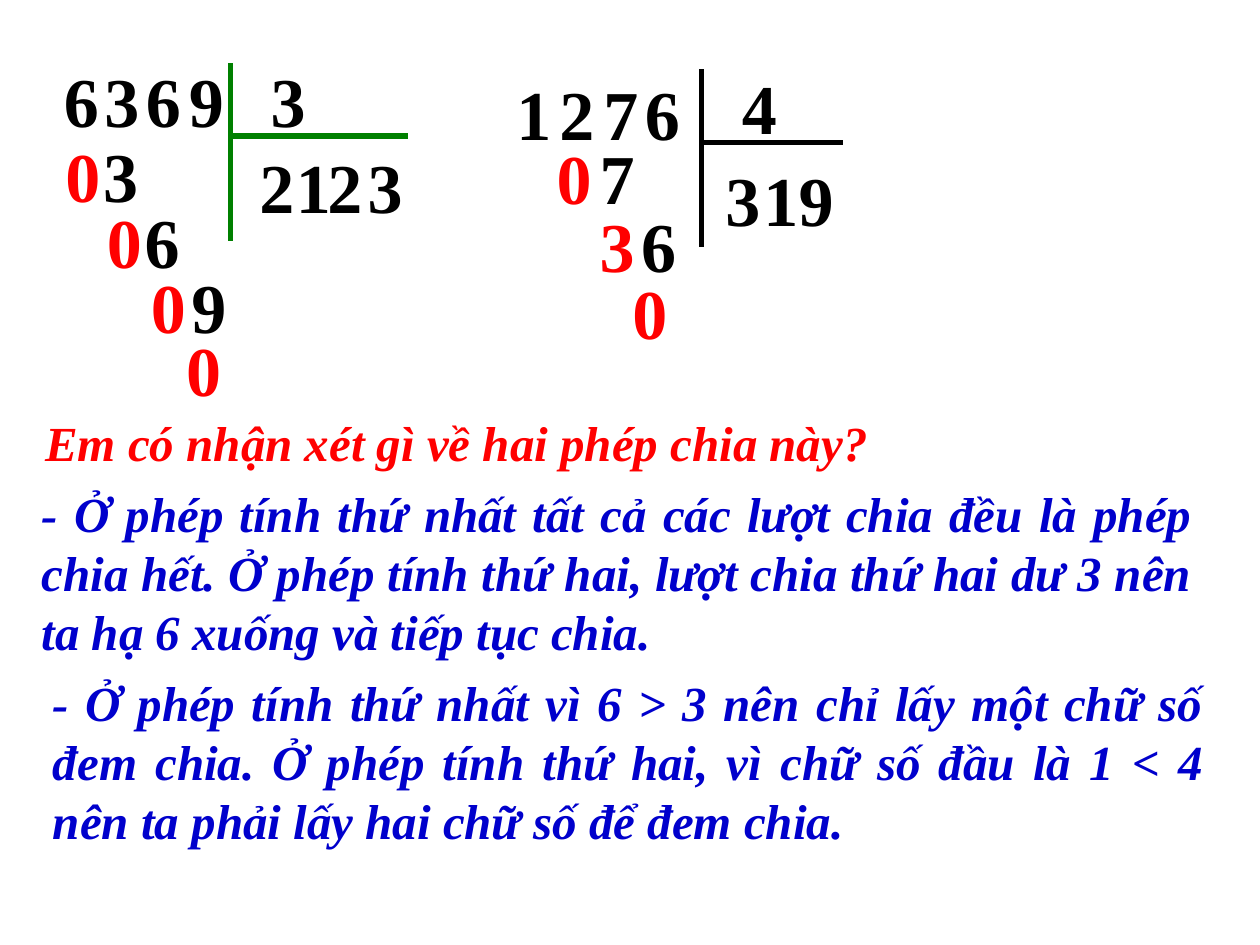
from dataclasses import dataclass

from lxml import etree
from pptx import Presentation
from pptx.dml.color import RGBColor
from pptx.enum.shapes import MSO_CONNECTOR
from pptx.enum.text import MSO_ANCHOR, MSO_AUTO_SIZE, PP_ALIGN
from pptx.oxml.ns import qn
from pptx.util import Inches, Pt

STRAIGHT = MSO_CONNECTOR.STRAIGHT
JUSTIFY = PP_ALIGN.JUSTIFY
LEFT = PP_ALIGN.LEFT
TOP = MSO_ANCHOR.TOP
GROW = MSO_AUTO_SIZE.SHAPE_TO_FIT_TEXT
TWO_CONTENT = 3


@dataclass(frozen=True)
class Theme:
    font: str = "Times New Roman"
    digit_size: int = 40
    text_size: int = 28
    rule_width: int = 3
    edge_width: int = 2
    space_before: int = 50000  # half a line, in thousandths of a percent
    ink: RGBColor = RGBColor(0, 0, 0)
    paper: RGBColor = RGBColor(255, 255, 255)
    red: RGBColor = RGBColor(255, 0, 0)
    green: RGBColor = RGBColor(0, 128, 0)
    blue: RGBColor = RGBColor(0, 0, 204)


class Board:
    """Draws on one slide, measured on a grid of 100 columns by 75 rows."""

    def __init__(self, deck, theme):
        self.theme = theme
        self.slide = deck.slides.add_slide(deck.slide_layouts[TWO_CONTENT])
        self.column = deck.slide_width / 100
        self.row = deck.slide_height / 75

    def place(self, columns, rows):
        return round(columns * self.column), round(rows * self.row)

    def set_text(self, box, text, size, color, align, italic=False):
        frame = box.text_frame
        frame.text = text
        frame.word_wrap = True
        frame.auto_size = GROW
        frame.vertical_anchor = TOP
        para = frame.paragraphs[0]
        para.alignment = align
        para.space_before = Pt(0)
        properties = para._p.get_or_add_pPr()
        before = properties.find(qn("a:spcBef"))
        before.clear()
        etree.SubElement(before, qn("a:spcPct"), val=str(self.theme.space_before))
        font = para.runs[0].font
        font.name, font.size = self.theme.font, Pt(size)
        font.bold, font.italic = True, italic
        font.color.rgb = color
        return properties

    def digits(self, top, cells, remainder=False):
        """One row of digits; a remainder row starts with a red digit."""
        for index, (digit, left, width) in enumerate(cells):
            box = self.slide.shapes.add_textbox(*self.place(left, top), *self.place(width, 7.7))
            color = self.theme.red if remainder and index == 0 else self.theme.ink
            self.set_text(box, digit, self.theme.digit_size, color, LEFT)

    def division_bars(self, left, top, middle, right, color):
        bottom = top + 14.1
        group = self.slide.shapes.add_group_shape()
        for start, end in (
            ((left, top), (left, bottom)),
            ((left, middle), (right, middle)),
        ):
            bar = group.shapes.add_connector(STRAIGHT, *self.place(*start), *self.place(*end))
            bar.line.color.rgb = color
            bar.line.width = Pt(self.theme.rule_width)
            etree.SubElement(bar._element.spPr, qn("a:effectLst"))

    def statement(self, index, text, left, top, height, color):
        box = self.slide.placeholders[index]
        box.left, box.top = self.place(left, top)
        box.width, box.height = self.place(93.3, height)
        box.fill.solid()
        box.fill.fore_color.rgb = self.theme.paper
        box.line.color.rgb = self.theme.paper
        box.line.width = Pt(self.theme.edge_width)
        properties = self.set_text(box, text, self.theme.text_size, color, JUSTIFY, True)
        properties.set("marL", "0")
        properties.set("indent", "0")
        etree.SubElement(properties, qn("a:buNone"))


def main():
    deck = Presentation()
    deck.slide_width, deck.slide_height = Inches(10), Inches(7.5)
    theme = Theme()
    board = Board(deck, theme)

    # First division: 6369 : 3
    board.division_bars(18.3, 5, 10.8, 32.4, theme.green)
    board.digits(4.1, [("6", 4.1, 4.6), ("3", 7.3, 5.1), ("6", 10.6, 4.9),
                       ("9", 14, 5), ("3", 20.5, 13.3)])
    board.digits(10.9, [("2", 19.6, 5), ("1", 22.5, 6.7), ("2", 25, 5.8), ("3", 28.2, 6.7)])
    board.digits(10, [("0", 4.2, 5), ("3", 7.2, 5.8)], remainder=True)
    board.digits(15.3, [("0", 7.5, 5.8), ("6", 10.5, 5.8)], remainder=True)
    board.digits(20.4, [("0", 11, 6.7), ("9", 14.2, 5)], remainder=True)
    board.digits(25.4, [("0", 13.8, 6.7)], remainder=True)

    # Second division: 1276 : 4
    board.division_bars(55.7, 5.5, 11.3, 66.9, theme.ink)
    board.digits(5.1, [("1", 40, 4.7), ("2", 43.4, 5.2), ("7", 46.9, 5.5), ("6", 50.2, 4.7)])
    board.digits(4.6, [("4", 57.9, 13.3)])
    board.digits(11.9, [("3", 56.6, 4.3), ("1", 59.6, 5.5), ("9", 62.4, 5.8)])
    board.digits(10.2, [("0", 43.2, 5), ("7", 46.6, 5.8)], remainder=True)
    board.digits(15.6, [("3", 46.6, 5.8), ("6", 49.9, 5.8)], remainder=True)
    board.digits(20.9, [("0", 49.2, 6.7)], remainder=True)

    # Question and the two remarks
    board.statement(0, "Em có nhận xét gì về hai phép chia này?", 2.6, 32.2, 5.7, theme.red)
    board.statement(
        1,
        "- Ở phép tính thứ nhất tất cả các lượt chia đều là phép chia hết. "
        "Ở phép tính thứ hai, lượt chia thứ hai dư 3 nên ta hạ 6 xuống và tiếp tục chia.",
        2.3, 37.9, 15.1, theme.blue)
    board.statement(
        2,
        "- Ở phép tính thứ nhất vì 6 > 3 nên chỉ lấy một chữ số đem chia. "
        "Ở phép tính thứ hai, vì chữ số đầu là 1 < 4 nên ta phải lấy hai chữ số để đem chia.",
        3.2, 52.9, 15.1, theme.blue)

    deck.save("out.pptx")


if __name__ == "__main__":
    main()
